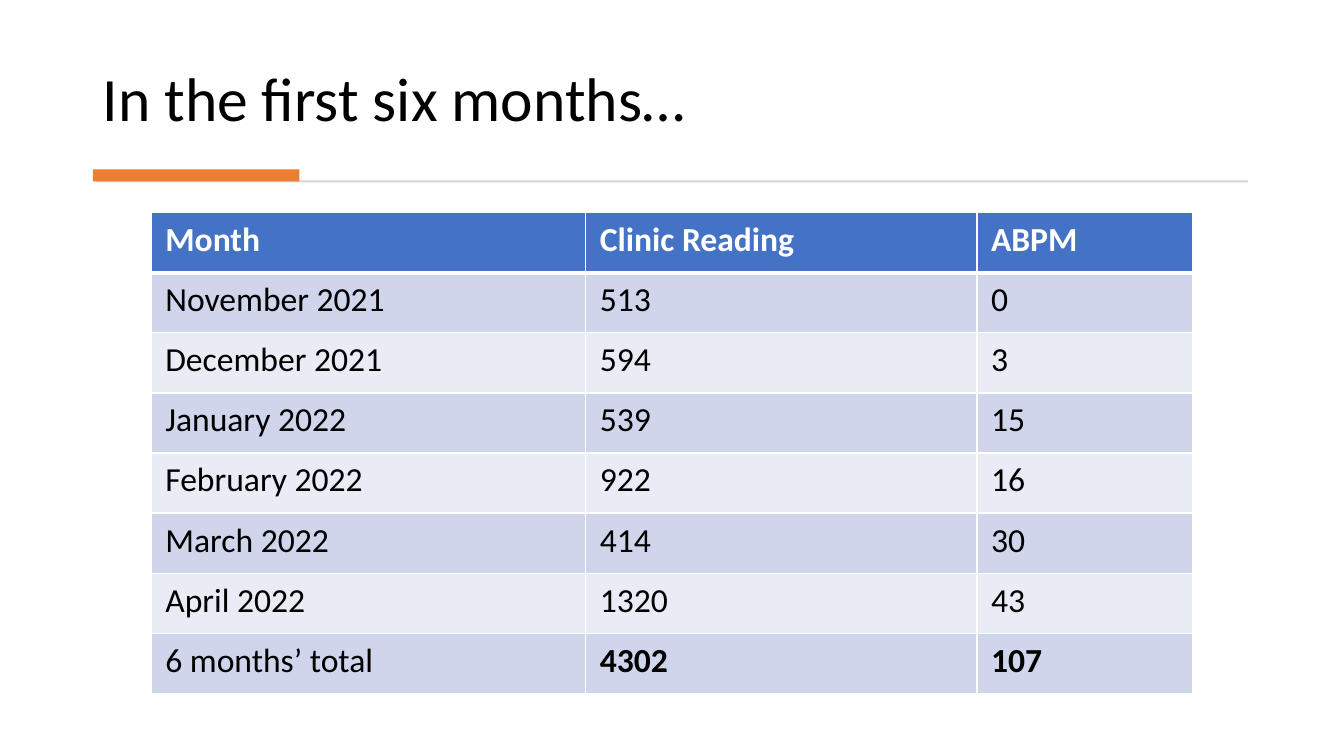
import dataclasses

import lxml.etree
import pptx
import pptx.dml.color
import pptx.enum.shapes
import pptx.enum.text
import pptx.oxml.ns
import pptx.util

EMU_PER_PX = 9144  # 100 px to the inch


def px(length):
    return pptx.util.Emu(length * EMU_PER_PX)


def rgb(code):
    return pptx.dml.color.RGBColor.from_string(code)


@dataclasses.dataclass(frozen=True)
class Theme:
    font: str = "Calibri"
    title_size: int = 44
    table_size: int = 24
    ink: str = "000000"
    paper: str = "FFFFFF"
    rule: str = "D5D5D5"
    accent: str = "ED7D31"
    header: str = "4472C4"
    bands: tuple = ("CFD5EA", "E9EBF5")
    grid_width: int = 1
    header_grid_width: int = 3


class SlideBuilder:
    def __init__(self, slide, theme):
        self.slide = slide
        self.theme = theme

    def style_text(self, frame, size, color, bold=False):
        for paragraph in frame.paragraphs:
            for run in paragraph.runs:
                run.font.name = self.theme.font
                run.font.size = pptx.util.Pt(size)
                run.font.bold = bold
                run.font.color.rgb = rgb(color)

    def title(self, text, left, top, width, height):
        frame = self.slide.shapes.add_textbox(*map(px, (left, top, width, height))).text_frame
        frame.word_wrap = True
        frame.vertical_anchor = pptx.enum.text.MSO_ANCHOR.BOTTOM
        frame.text = text
        frame.paragraphs[0].line_spacing = 0.9
        self.style_text(frame, self.theme.title_size, self.theme.ink)

    def bar(self, color, left, top, width, height):
        bar = self.slide.shapes.add_shape(
            pptx.enum.shapes.MSO_SHAPE.RECTANGLE, *map(px, (left, top, width, height)))
        bar.shadow.inherit = False
        bar.fill.solid()
        bar.fill.fore_color.rgb = rgb(color)
        bar.line.fill.background()

    def cell_border(self, cell, side, points):
        qn = pptx.oxml.ns.qn
        properties = cell._tc.get_or_add_tcPr()
        line = lxml.etree.SubElement(
            properties, qn(f"a:ln{side}"), w=str(pptx.util.Pt(points)))
        fill = lxml.etree.SubElement(line, qn("a:solidFill"))
        lxml.etree.SubElement(fill, qn("a:srgbClr"), val=self.theme.paper)

    def table_cell(self, cell, text, row, bold):
        theme = self.theme
        is_header = row == 0
        cell.margin_left = cell.margin_right = px(14)
        cell.margin_top = cell.margin_bottom = px(7)

        # The line under the header is shared with the row below it
        heavy_side = {0: "B", 1: "T"}.get(row)
        for side in "LRTB":
            heavy = side == heavy_side
            self.cell_border(cell, side, theme.header_grid_width if heavy else theme.grid_width)

        cell.fill.solid()
        cell.fill.fore_color.rgb = rgb(theme.header if is_header else theme.bands[(row - 1) % 2])
        cell.text_frame.text = text
        self.style_text(cell.text_frame, theme.table_size,
                        theme.paper if is_header else theme.ink, bold)

    def table(self, rows, column_widths, left, top, height):
        table = self.slide.shapes.add_table(
            len(rows), len(column_widths),
            *map(px, (left, top, sum(column_widths), height))).table
        for column, width in zip(table.columns, column_widths):
            column.width = px(width)
        total_row = len(rows) - 1
        for row, values in enumerate(rows):
            for column, value in enumerate(values):
                bold = row == 0 or (row == total_row and column > 0)
                self.table_cell(table.cell(row, column), value, row, bold)


READINGS = [
    ("Month", "Clinic Reading", "ABPM"),
    ("November 2021", "513", "0"),
    ("December 2021", "594", "3"),
    ("January 2022", "539", "15"),
    ("February 2022", "922", "16"),
    ("March 2022", "414", "30"),
    ("April 2022", "1320", "43"),
    ("6 months’ total", "4302", "107"),
]


def main():
    presentation = pptx.Presentation()
    presentation.slide_width = pptx.util.Inches(13.33)
    presentation.slide_height = pptx.util.Inches(7.5)
    theme = Theme()
    builder = SlideBuilder(
        presentation.slides.add_slide(presentation.slide_layouts[6]), theme)

    # Heading with its rule and accent
    builder.title("In the first six months…", 92, 28, 1149, 111)
    builder.bar(theme.rule, 95, 179, 1143, 2)
    builder.bar(theme.accent, 92, 168, 205, 12)

    # Monthly readings
    builder.table(READINGS, (431, 388, 214), left=150, top=211, height=477)

    presentation.save("out.pptx")


if __name__ == "__main__":
    main()
